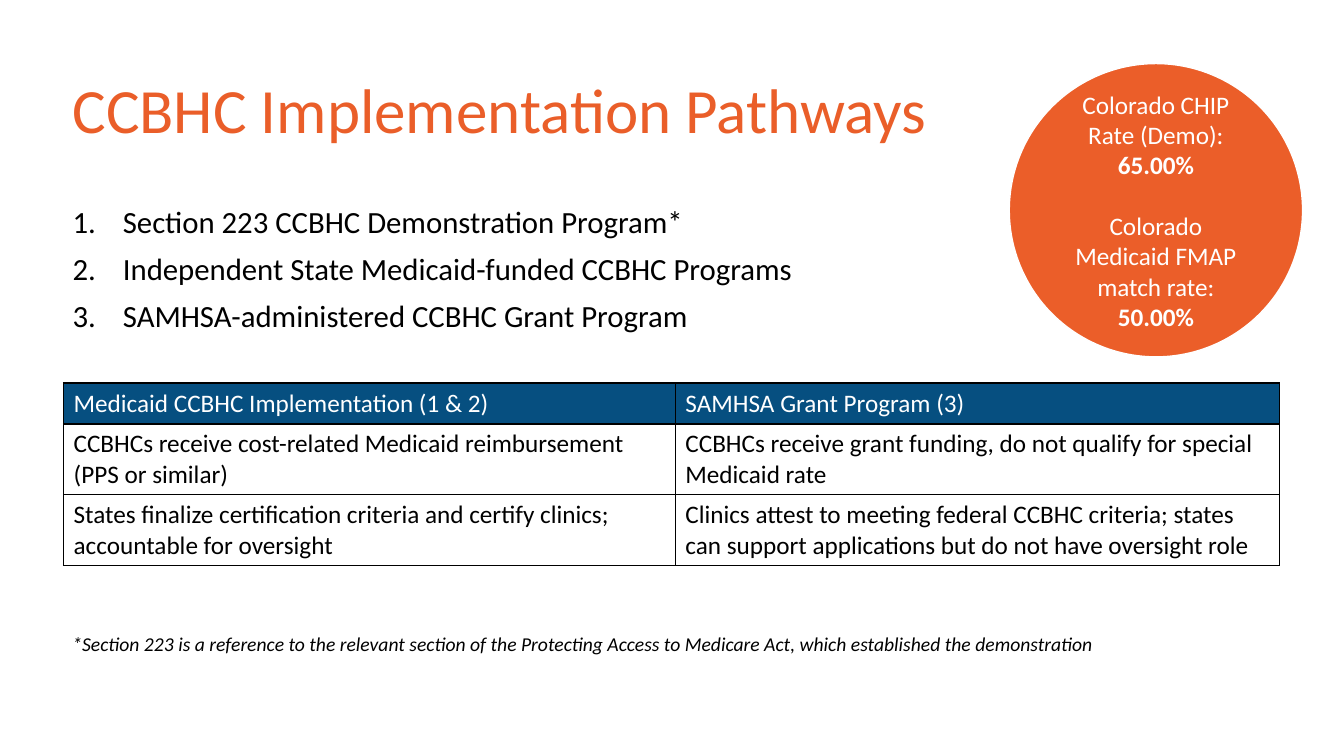
import pptx
import pptx.util
import pptx.dml.color
import pptx.enum.shapes
import pptx.enum.text
import pptx.oxml
import pptx.oxml.ns

Pt = pptx.util.Pt
ALIGN = pptx.enum.text.PP_ALIGN
ANCHOR = pptx.enum.text.MSO_ANCHOR
NS = pptx.oxml.ns.nsdecls("a")
ORANGE, BLUE, BLACK, WHITE = "EA5E29", "064F80", "000000", "FFFFFF"


def tint(code):
    return pptx.dml.color.RGBColor.from_string(code)


def apply(item, values):
    for key, value in values.items():
        setattr(item, key, value)


class Deck:
    face = "Calibri"

    def __init__(self, wide, high):
        self.deck = pptx.Presentation()
        apply(self.deck, {"slide_width": Pt(wide), "slide_height": Pt(high)})
        self.slide = self.deck.slides.add_slide(self.deck.slide_layouts[1])

    def place(self, shape, box):
        names = ("left", "top", "width", "height")
        apply(shape, {name: Pt(size) for name, size in zip(names, box)})

    def label(self, para, text, size, color, **style):
        run = para.add_run()
        run.text = text
        apply(run.font, {"name": self.face, "size": Pt(size), **style})
        run.font.color.rgb = tint(color)

    def title(self, text, box):
        shape = self.slide.shapes.title
        self.place(shape, box)
        frame = shape.text_frame
        apply(frame, {"vertical_anchor": ANCHOR.MIDDLE, "word_wrap": True})
        para = frame.paragraphs[0]
        apply(para, {"alignment": ALIGN.LEFT, "line_spacing": 0.9})
        self.label(para, text, 45, ORANGE)

    def steps(self, items, box):
        shape = self.slide.placeholders[1]
        self.place(shape, box)
        frame = shape.text_frame
        for row, text in enumerate(items):
            para = frame.add_paragraph() if row else frame.paragraphs[0]
            apply(para, {"line_spacing": 0.9, "space_before": Pt(10 if row else 0)})
            props = para._p.get_or_add_pPr()
            props.set("marL", str(Pt(36)))
            props.set("indent", str(Pt(-36)))
            props.append(pptx.oxml.parse_xml(
                f'<a:buFont {NS} typeface="+mj-lt"/>'))
            props.append(pptx.oxml.parse_xml(
                f'<a:buAutoNum {NS} type="arabicPeriod"/>'))
            self.label(para, text, 22, BLACK)

    def note(self, text, box):
        shape = self.slide.shapes.add_textbox(*map(Pt, box))
        shape.text_frame.word_wrap = False
        self.label(shape.text_frame.paragraphs[0], text, 14, BLACK, italic=True)

    def edge(self, cell):
        props = cell._tc.get_or_add_tcPr()
        for side in "LRTB":
            props.append(pptx.oxml.parse_xml(
                f'<a:ln{side} {NS} w="{Pt(1)}"><a:solidFill>'
                f'<a:srgbClr val="{BLACK}"/></a:solidFill></a:ln{side}>'))

    def table(self, rows, spot, cols, highs):
        size = (sum(cols), sum(highs))
        table = self.slide.shapes.add_table(
            len(rows), len(cols), *map(Pt, spot + size)).table
        table.horz_banding = False
        for col, width in zip(table.columns, cols):
            col.width = Pt(width)
        for row, high in zip(table.rows, highs):
            row.height = Pt(high)
        for y, row in enumerate(rows):
            for x, text in enumerate(row):
                cell = table.cell(y, x)
                self.edge(cell)
                if y:
                    cell.fill.background()
                else:
                    cell.fill.solid()
                    cell.fill.fore_color.rgb = tint(BLUE)
                self.label(cell.text_frame.paragraphs[0], text, 18,
                           BLACK if y else WHITE, bold=False)

    def badge(self, rates, box):
        shape = self.slide.shapes.add_shape(
            pptx.enum.shapes.MSO_SHAPE.OVAL, *map(Pt, box))
        shape.shadow.inherit = False
        shape.fill.solid()
        shape.fill.fore_color.rgb = tint("EB5E29")
        shape.line.color.rgb = tint(WHITE)
        shape.line.width = Pt(1)
        frame = shape.text_frame
        apply(frame, {"vertical_anchor": ANCHOR.MIDDLE, "word_wrap": True})
        for row, (name, rate) in enumerate(rates):
            para = frame.add_paragraph() if row else frame.paragraphs[0]
            apply(para, {"alignment": ALIGN.CENTER,
                         "space_before": Pt(22 if row else 0)})
            self.label(para, name + " ", 18, WHITE)
            self.label(para, rate, 18, WHITE, bold=True)


def main():
    deck = Deck(960, 540)
    deck.title("CCBHC Implementation Pathways", (44.6, 28.8, 871, 104.4))
    deck.steps([
        "Section 223 CCBHC Demonstration Program*",
        "Independent State Medicaid-funded CCBHC Programs",
        "SAMHSA-administered CCBHC Grant Program",
    ], (44.6, 144, 871, 316))
    deck.note("*Section 223 is a reference to the relevant section of the "
              "Protecting Access to Medicare Act, which established the "
              "demonstration", (44.6, 447.8, 751, 24.5))
    deck.table([
        ("Medicaid CCBHC Implementation (1 & 2)", "SAMHSA Grant Program (3)"),
        ("CCBHCs receive cost-related Medicaid reimbursement (PPS or similar)",
         "CCBHCs receive grant funding, do not qualify for special "
         "Medicaid rate"),
        ("States finalize certification criteria and certify clinics; "
         "accountable for oversight",
         "Clinics attest to meeting federal CCBHC criteria; states can "
         "support applications but do not have oversight role"),
    ], (45.4, 273.6), (437, 431.5), (29.2, 50.5, 50.5))
    deck.badge([
        ("Colorado CHIP Rate (Demo):", "65.00%"),
        ("Colorado Medicaid FMAP match rate:", "50.00%"),
    ], (720.9, 45.4, 209.5, 209.5))
    deck.deck.save("out.pptx")


if __name__ == "__main__":
    main()
